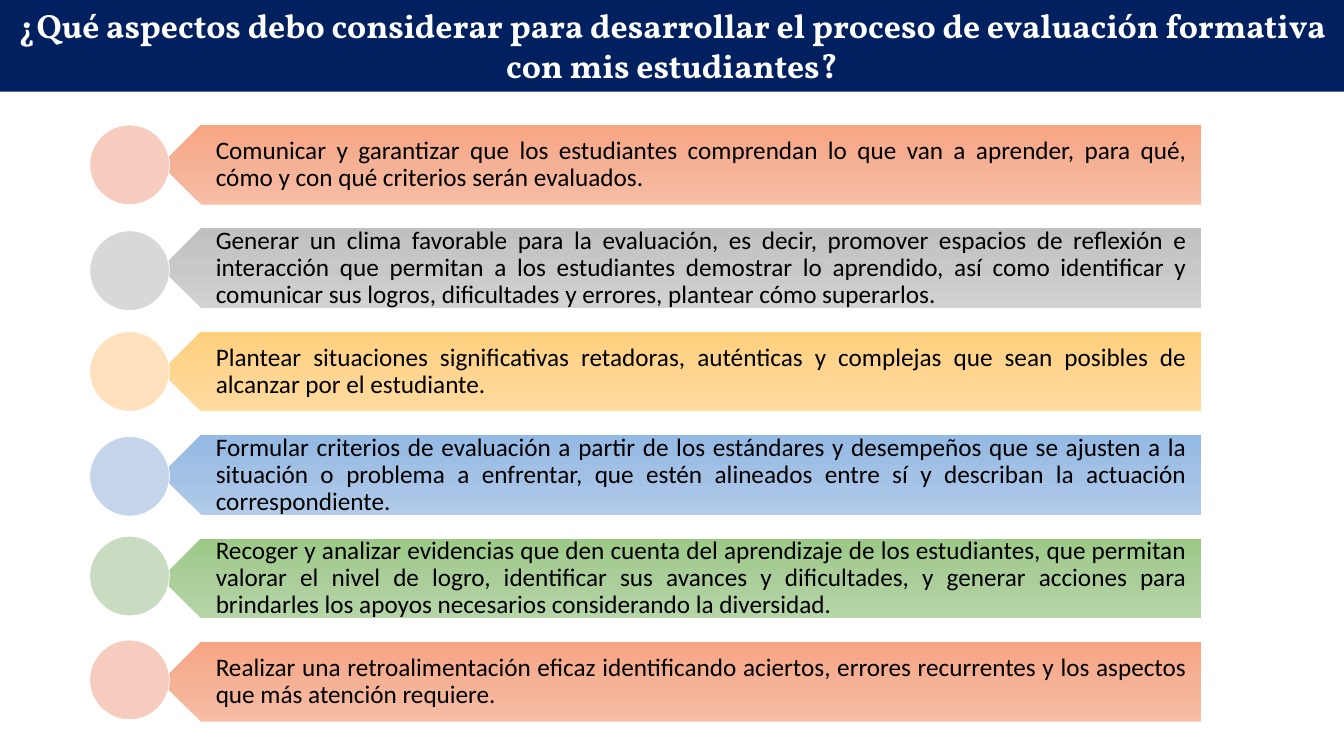
from copy import deepcopy
from pptx import Presentation
from pptx.dml.color import RGBColor
from pptx.enum.shapes import MSO_SHAPE
from pptx.enum.text import MSO_ANCHOR, MSO_AUTO_SIZE, PP_ALIGN
from pptx.oxml.ns import qn
from pptx.util import Inches, Pt

PENTAGON, OVAL = MSO_SHAPE.PENTAGON, MSO_SHAPE.OVAL
TOP, MIDDLE = MSO_ANCHOR.TOP, MSO_ANCHOR.MIDDLE
CENTER, JUSTIFY = PP_ALIGN.CENTER, PP_ALIGN.JUSTIFY
NO_AUTOSIZE = MSO_AUTO_SIZE.NONE

FIRST_TOP, PITCH, BAR_HEIGHT = 1.24, 1.026, 0.79
BAR_LEFT, BAR_RIGHT = 1.6, 11.91
TEXT_LEFT, CIRCLE_LEFT = 1.79, 0.89

ORANGE = ("F7BDA5", "F5B196", "F8A582", "F6CCBE")
GRAY = ("D2D2D2", "C8C8C8", "C0C0C0", "D8D8D8")
YELLOW = ("FFDB9E", "FFD590", "FFD07C", "FFE2BD")
BLUE = ("B1CBE9", "A3C1E5", "93B9E4", "C4D5EB")
GREEN = ("B5D5A7", "AACE9A", "9CC987", "C9DBC1")

ASPECTS = [
    (ORANGE, 1.24, "Comunicar y garantizar que los estudiantes comprendan lo que van a aprender, para qué, cómo y con qué criterios serán evaluados."),
    (GRAY, 2.29, "Generar un clima favorable para la evaluación, es decir, promover espacios de reflexión e interacción que permitan a los estudiantes demostrar lo aprendido, así como identificar y comunicar sus logros, dificultades y errores, plantear cómo superarlos."),
    (YELLOW, 3.29, "Plantear situaciones significativas retadoras, auténticas y complejas que sean posibles de alcanzar por el estudiante."),
    (BLUE, 4.33, "Formular criterios de evaluación a partir de los estándares y desempeños que se ajusten a la situación o problema a enfrentar, que estén alineados entre sí y describan la actuación correspondiente."),
    (GREEN, 5.32, "Recoger y analizar evidencias que den cuenta del aprendizaje de los estudiantes, que permitan valorar el nivel de logro, identificar sus avances y dificultades, y generar acciones para brindarles los apoyos necesarios considerando la diversidad."),
    (ORANGE, 6.35, "Realizar una retroalimentación eficaz identificando aciertos, errores recurrentes y los aspectos que más atención requiere."),
]


def color(hex_string):
    return RGBColor.from_string(hex_string)


def write(shape, text, *, font, size, fill, align, anchor, margins, bold=False, spacing=1.0):
    frame = shape.text_frame
    frame.word_wrap = True
    frame.auto_size = NO_AUTOSIZE
    frame.vertical_anchor = anchor
    frame.margin_left, frame.margin_top, frame.margin_right, frame.margin_bottom = map(Inches, margins)
    paragraph = frame.paragraphs[0]
    paragraph.alignment = align
    paragraph.line_spacing = spacing
    run = paragraph.add_run()
    run.text = text
    run.font.name = font
    run.font.size = Pt(size)
    run.font.bold = bold
    run.font.color.rgb = color(fill)


presentation = Presentation()
presentation.slide_width = Inches(13.33)
presentation.slide_height = Inches(7.5)
slide = presentation.slides.add_slide(presentation.slide_layouts[5])
shapes = slide.shapes

title = shapes.title
title.left, title.top = 0, 0
title.width, title.height = presentation.slide_width, Inches(0.91)
title.fill.solid()
title.fill.fore_color.rgb = color("002060")
write(title, "¿Qué aspectos debo considerar para desarrollar el proceso de evaluación formativa con mis estudiantes?",
      font="Vollkorn", size=24, fill="FFFFFF", bold=True, align=CENTER, anchor=TOP,
      margins=(0.1, 0.05, 0.1, 0.05))

for row, (palette, circle_top, text) in enumerate(ASPECTS):
    top, height = Inches(FIRST_TOP + row * PITCH), Inches(BAR_HEIGHT)

    bar = shapes.add_shape(PENTAGON, Inches(BAR_LEFT), top, Inches(BAR_RIGHT - BAR_LEFT), height)
    bar.rotation = 180
    bar.shadow.inherit = False
    bar.line.fill.background()
    bar.fill.gradient()
    bar.fill.gradient_angle = 270
    stop_list = bar.fill.gradient_stops[0]._gs.getparent()
    stop_list.insert(1, deepcopy(stop_list.findall(qn("a:gs"))[0]))
    for stop, position, shade in zip(bar.fill.gradient_stops, (0, 0.5, 1), palette):
        stop.position = position
        stop.color.rgb = color(shade)

    label = shapes.add_textbox(Inches(TEXT_LEFT), top, Inches(BAR_RIGHT - TEXT_LEFT), height)
    write(label, text, font="Calibri", size=18, fill="000000", align=JUSTIFY, anchor=MIDDLE,
          margins=(0.35, 0.07, 0.14, 0.07), spacing=0.9)

    circle = shapes.add_shape(OVAL, Inches(CIRCLE_LEFT), Inches(circle_top), height, height)
    circle.shadow.inherit = False
    circle.fill.solid()
    circle.fill.fore_color.rgb = color(palette[3])
    circle.line.color.rgb = color("FFFFFF")
    circle.line.width = Pt(0.5)

presentation.save("out.pptx")
